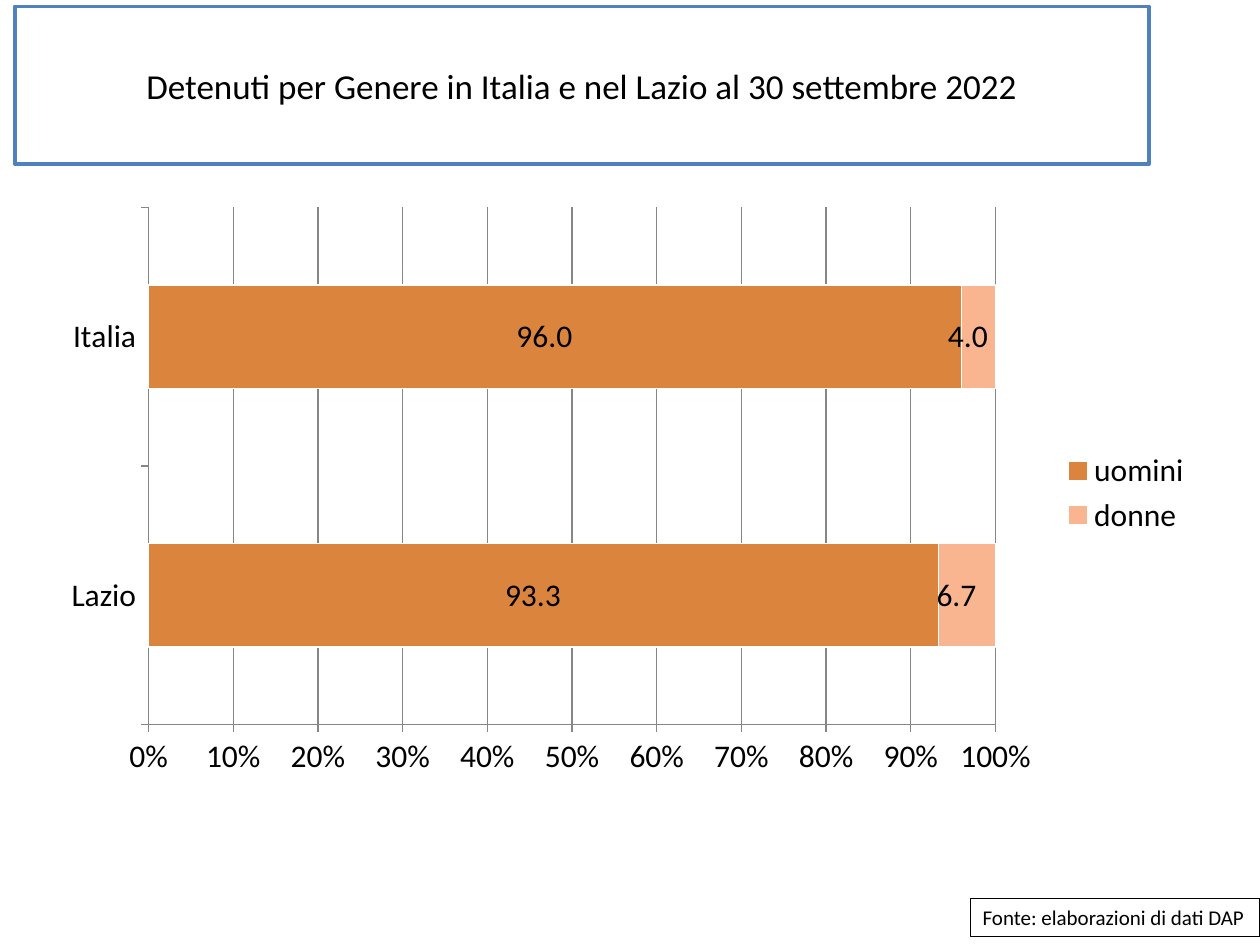
from lxml import etree
from pptx import Presentation
from pptx import util as u
from pptx.chart.data import CategoryChartData
from pptx.dml.color import RGBColor
from pptx.enum import chart as charts, shapes, text
from pptx.oxml import parse_xml
from pptx.oxml.ns import nsdecls

FONT = "Calibri"
BLACK = RGBColor(0, 0, 0)
WHITE = RGBColor(255, 255, 255)
BLUE = RGBColor(0x4F, 0x81, 0xBD)
GREY = RGBColor(0x86, 0x86, 0x86)
ORANGE = RGBColor(0xDB, 0x84, 0x3D)
PEACH = RGBColor(0xF9, 0xB5, 0x90)

LABEL_FORMAT = r"_-* #,##0.0\ _€_-;\-* #,##0.0\ _€_-"
PLOT_AREA = {"x": 0.09, "y": 0.02, "w": 0.73, "h": 0.87}


def add_framed_text(page, wording, place, size, border, border_width, align, wrap=True):
    box = page.shapes.add_shape(
        shapes.MSO_SHAPE.RECTANGLE, *(u.Cm(length) for length in place))
    box.shadow.inherit = False
    box.fill.solid()
    box.fill.fore_color.rgb = WHITE
    box.line.color.rgb = border
    box.line.width = u.Pt(border_width)
    frame = box.text_frame
    frame.word_wrap = wrap
    frame.vertical_anchor = text.MSO_ANCHOR.MIDDLE
    paragraph = frame.paragraphs[0]
    paragraph.text = wording
    paragraph.alignment = align
    paragraph.font.name = FONT
    paragraph.font.size = u.Pt(size)
    paragraph.font.color.rgb = BLACK
    return box


def set_plot_layout(chart):
    """Fix the inner plot area as fractions of the chart frame."""
    plot_area = chart.plots[0]._element.getparent()
    for old in plot_area.findall("{*}layout"):
        plot_area.remove(old)
    layout = parse_xml(
        f'<c:layout {nsdecls("c")}><c:manualLayout><c:layoutTarget val="inner"/>'
        '<c:xMode val="edge"/><c:yMode val="edge"/></c:manualLayout></c:layout>')
    for side, share in PLOT_AREA.items():
        tag = etree.QName(layout[0].nsmap["c"], side)
        etree.SubElement(layout[0], tag).set("val", str(share))
    plot_area.insert(0, layout)


def style_axis(axis):
    axis.major_tick_mark = charts.XL_TICK_MARK.OUTSIDE
    axis.minor_tick_mark = charts.XL_TICK_MARK.NONE
    axis.format.line.color.rgb = GREY
    axis.format.line.width = u.Pt(0.75)


def style_series(series, color):
    series.format.fill.solid()
    series.format.fill.fore_color.rgb = color
    series.format.line.color.rgb = WHITE
    series.format.line.width = u.Pt(0.75)
    labels = series.data_labels
    labels.show_value = True
    labels.position = charts.XL_LABEL_POSITION.CENTER
    labels.number_format = LABEL_FORMAT
    labels.number_format_is_linked = False


def add_gender_chart(page):
    data = CategoryChartData()
    data.categories = ["Lazio", "Italia"]
    data.add_series("uomini", [93.3, 96.0])
    data.add_series("donne", [6.7, 4.0])
    chart = page.shapes.add_chart(
        charts.XL_CHART_TYPE.BAR_STACKED_100,
        u.Cm(0.89), u.Cm(3.94), u.Cm(23.39), u.Cm(11.99), data).chart
    chart.has_title = False
    chart.font.name = FONT
    chart.font.size = u.Pt(18)
    chart.font.color.rgb = BLACK
    set_plot_layout(chart)

    # Bars
    plot = chart.plots[0]
    plot.gap_width = 150
    plot.overlap = 100
    plot.vary_by_categories = False
    for series, color in zip(plot.series, (ORANGE, PEACH)):
        style_series(series, color)

    # Axes
    style_axis(chart.category_axis)
    values = chart.value_axis
    style_axis(values)
    values.minimum_scale = 0
    values.has_major_gridlines = True
    values.major_gridlines.format.line.color.rgb = GREY
    values.major_gridlines.format.line.width = u.Pt(0.75)
    values.tick_labels.number_format = "0%"
    values.tick_labels.number_format_is_linked = False

    # Legend
    chart.has_legend = True
    chart.legend.position = charts.XL_LEGEND_POSITION.RIGHT
    chart.legend.include_in_layout = False


def main():
    deck = Presentation()
    deck.slide_width, deck.slide_height = u.Cm(25.4), u.Cm(19.05)
    page = deck.slides.add_slide(deck.slide_layouts[6])

    # Title
    add_framed_text(
        page, "Detenuti per Genere in Italia e nel Lazio al 30 settembre 2022",
        (0.3, 0.13, 22.86, 3.18), 20, BLUE, 2, text.PP_ALIGN.CENTER)

    # Source note
    add_framed_text(
        page, "Fonte: elaborazioni di dati DAP",
        (19.56, 18.11, 5.84, 0.77), 12, BLACK, 0.75, text.PP_ALIGN.LEFT, wrap=False)

    # Share of men and women
    add_gender_chart(page)

    deck.save("out.pptx")


if __name__ == "__main__":
    main()
